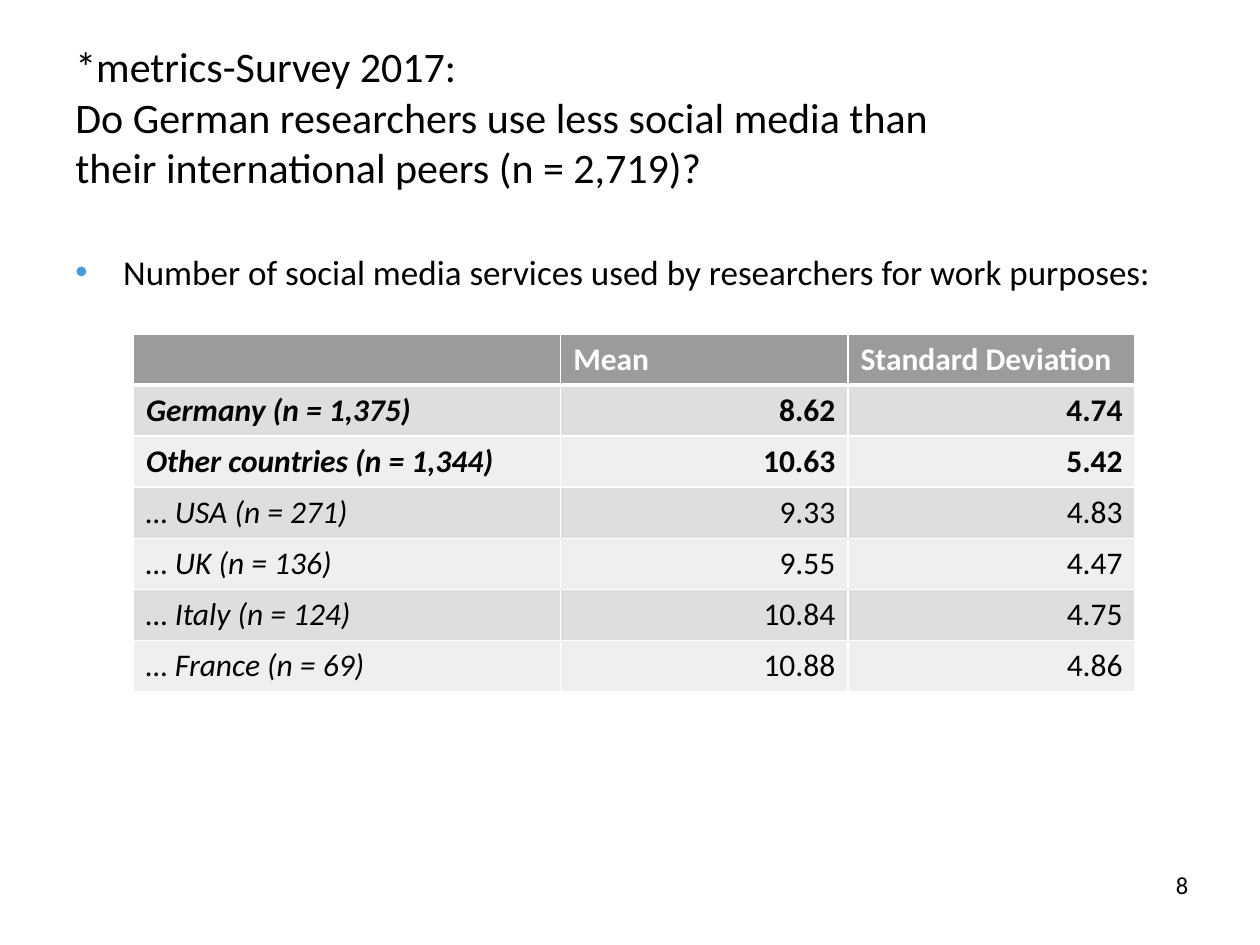
import pptx
import pptx.util
import pptx.dml.color
import pptx.enum.text
import pptx.oxml
import pptx.oxml.ns
from lxml import etree

Inches = pptx.util.Inches
Pt = pptx.util.Pt
ALIGN = pptx.enum.text.PP_ALIGN
ANCHOR = pptx.enum.text.MSO_ANCHOR

FONT = "Calibri"
COLORS = {
    "text": "000000",
    "white": "FFFFFF",
    "bullet": "449DD7",
    "header": "9A9B9B",
    "odd_row": "DEDEDE",
    "even_row": "EFEFEF",
}
HEADER = ("", "Mean", "Standard Deviation")
ROWS = [
    ("Germany (n = 1,375)", "8.62", "4.74"),
    ("Other countries (n = 1,344)", "10.63", "5.42"),
    ("… USA (n = 271)", "9.33", "4.83"),
    ("… UK (n = 136)", "9.55", "4.47"),
    ("… Italy (n = 124)", "10.84", "4.75"),
    ("… France (n = 69)", "10.88", "4.86"),
]
BOLD_ROWS = 3  # the header and the two main groups
COLUMN_SHARES = (3.39, 2.28, 2.28)


def rgb(name):
    return pptx.dml.color.RGBColor.from_string(COLORS[name])


def add_span(para, text, size, color="text", bold=False, italic=False):
    span = para.add_run()
    span.text = text
    font = span.font
    font.name, font.size, font.bold, font.italic = FONT, Pt(size), bold, italic
    font.color.rgb = rgb(color)


def add_text_box(page, left, top, width, height, anchor):
    box = page.shapes.add_textbox(Inches(left), Inches(top), Inches(width), Inches(height))
    frame = box.text_frame
    frame.word_wrap = True
    frame.vertical_anchor = anchor
    return frame.paragraphs[0]


def add_title(page, left, top, width, height):
    para = add_text_box(page, left, top, width, height, ANCHOR.MIDDLE)
    add_span(para, "*metrics-Survey 2017:", 24)
    para.add_line_break()
    add_span(para, "Do German researchers use less social media than "
                   "their international peers (n = 2,719)?", 24)


def add_bullet_line(page, left, top, width, height):
    para = add_text_box(page, left, top, width, height, ANCHOR.TOP)
    properties = para._p.get_or_add_pPr()
    properties.set("marL", str(Inches(0.38)))
    properties.set("indent", str(Inches(-0.38)))
    color = etree.SubElement(properties, pptx.oxml.ns.qn("a:buClr"))
    etree.SubElement(color, pptx.oxml.ns.qn("a:srgbClr"), val=COLORS["bullet"])
    etree.SubElement(properties, pptx.oxml.ns.qn("a:buFont"), typeface="Arial")
    etree.SubElement(properties, pptx.oxml.ns.qn("a:buChar"), char="•")
    add_span(para, "Number of social media services used by researchers for work purposes:", 20)


def set_borders(cell, top, bottom):
    properties = cell._tc.get_or_add_tcPr()
    for side, width in (("L", 1), ("R", 1), ("T", top), ("B", bottom)):
        line = etree.SubElement(properties, pptx.oxml.ns.qn("a:ln" + side), w=str(Pt(width)))
        fill = etree.SubElement(line, pptx.oxml.ns.qn("a:solidFill"))
        etree.SubElement(fill, pptx.oxml.ns.qn("a:srgbClr"), val=COLORS["white"])


def add_survey_table(page, left, top, width, height):
    records = [HEADER] + ROWS
    table = page.shapes.add_table(len(records), len(HEADER), Inches(left), Inches(top),
                                  Inches(width), Inches(height)).table
    for column, share in zip(table.columns, COLUMN_SHARES):
        column.width = Inches(width * share / sum(COLUMN_SHARES))
    for i, record in enumerate(records):
        is_header = i == 0
        fill = "header" if is_header else "odd_row" if i % 2 else "even_row"
        for j, text in enumerate(record):
            cell = table.cell(i, j)
            # A thick rule parts the header from the body
            set_borders(cell, top=3 if i == 1 else 1, bottom=3 if is_header else 1)
            cell.fill.solid()
            cell.fill.fore_color.rgb = rgb(fill)
            para = cell.text_frame.paragraphs[0]
            para.font.size = Pt(18)
            if not is_header and j > 0:
                para.alignment = ALIGN.RIGHT
            if text:
                add_span(para, text, 18, "white" if is_header else "text",
                         bold=i < BOLD_ROWS, italic=not is_header and j == 0)


def add_page_number(page, left, top, width, height):
    para = add_text_box(page, left, top, width, height, ANCHOR.MIDDLE)
    para.alignment = ALIGN.RIGHT
    add_span(para, "8", 14)


def main():
    deck = pptx.Presentation()
    deck.slide_width, deck.slide_height = Inches(10), Inches(7.5)
    page = deck.slides.add_slide(deck.slide_layouts[6])
    add_title(page, 0.5, 0.3, 7.44, 1.25)
    add_page_number(page, 7.2, 6.82, 2.33, 0.4)
    add_bullet_line(page, 0.5, 1.94, 9, 0.5)
    add_survey_table(page, 1.06, 2.65, 7.95, 2.84)
    deck.save("out.pptx")


if __name__ == "__main__":
    main()
